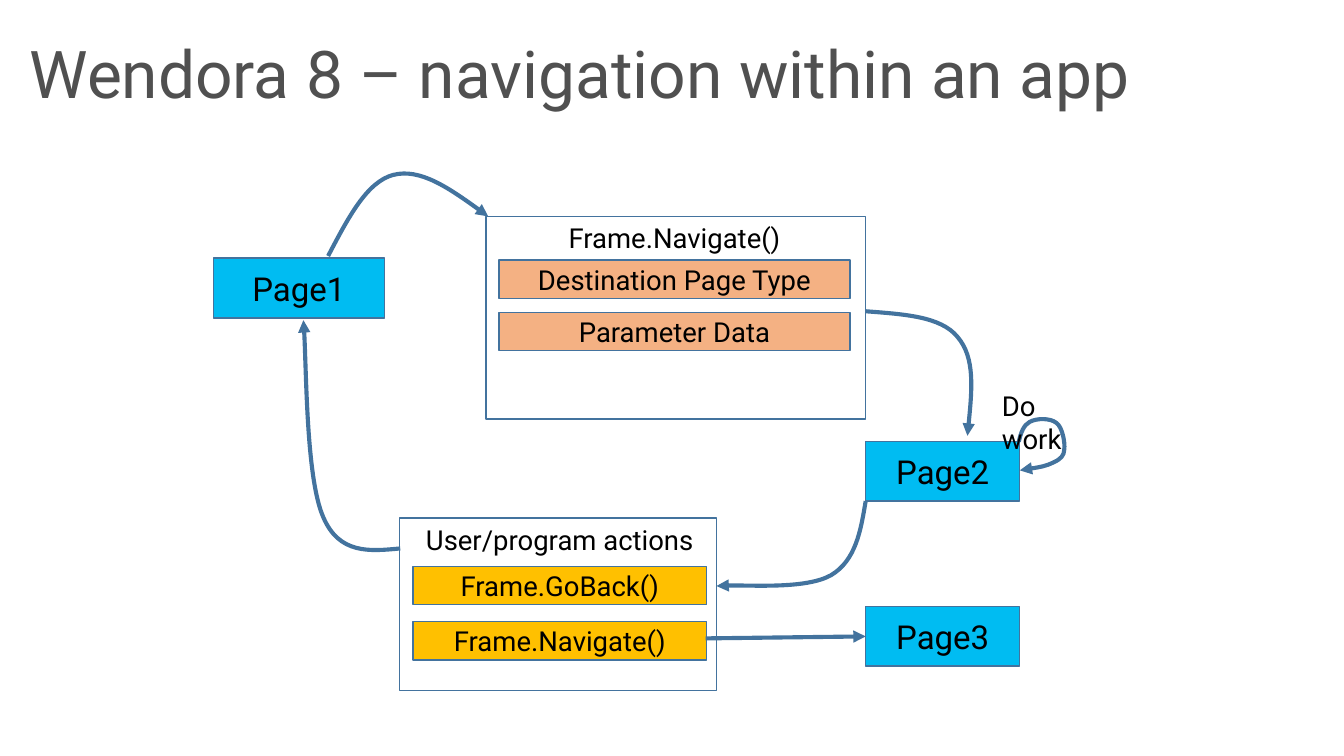
from lxml.etree import SubElement
from pptx import Presentation
from pptx.dml.color import RGBColor
from pptx.enum.shapes import MSO_CONNECTOR, MSO_SHAPE
from pptx.enum.text import MSO_ANCHOR, MSO_AUTO_SIZE, PP_ALIGN
from pptx.oxml.ns import qn
from pptx.util import Inches, Pt

FONT = "Roboto"
BLACK = "000000"
GREY = "505050"
LINE_BLUE = "43739E"
PAGE_BLUE = "00BCF2"
ORANGE = "F4B183"
AMBER = "FFC000"

# Each curve is a start point followed by three points per Bezier segment.
CURVES = {
    "page1 to navigate": [
        (3.32, 2.59),
        (3.52, 2.21), (3.71, 1.84), (3.98, 1.77),
        (4.25, 1.7), (4.6, 1.94), (4.94, 2.19),
    ],
    "navigate to page2": [
        (8.76, 3.15),
        (9.14, 3.18), (9.52, 3.2), (9.69, 3.41),
        (9.87, 3.62), (9.83, 4.02), (9.79, 4.41),
    ],
    "page2 to actions": [
        (8.76, 5.07),
        (8.71, 5.37), (8.66, 5.67), (8.41, 5.82),
        (8.16, 5.96), (7.44, 5.91), (7.25, 5.93),
    ],
    "actions to page1": [
        (4.05, 5.55),
        (3.74, 5.58), (3.43, 5.61), (3.27, 5.23),
        (3.1, 4.84), (3.1, 3.56), (3.07, 3.24),
    ],
    "page2 to itself": [
        (10.31, 4.47),
        (10.33, 4.38), (10.36, 4.3), (10.42, 4.27),
        (10.49, 4.23), (10.63, 4.23), (10.69, 4.28),
        (10.75, 4.32), (10.78, 4.48), (10.77, 4.55),
        (10.77, 4.61), (10.73, 4.65), (10.66, 4.68),
        (10.58, 4.72), (10.45, 4.74), (10.32, 4.76),
    ],
}


def rgb(color):
    return RGBColor.from_string(color)


def write(text_frame, text, size, color=BLACK, align=PP_ALIGN.CENTER):
    text_frame.word_wrap = True
    paragraph = text_frame.paragraphs[0]
    paragraph.text = text
    paragraph.alignment = align
    font = paragraph.runs[0].font
    font.name = FONT
    font.size = Pt(size)
    font.color.rgb = rgb(color)


def style_line(line, width):
    line.color.rgb = rgb(LINE_BLUE)
    line.width = Pt(width)


def add_box(slide, left, top, width, height, fill=None, text="", size=20):
    box = slide.shapes.add_shape(
        MSO_SHAPE.RECTANGLE, Inches(left), Inches(top), Inches(width), Inches(height))
    box.shadow.inherit = False
    style_line(box.line, 1)
    if fill:
        box.fill.solid()
        box.fill.fore_color.rgb = rgb(fill)
    else:
        box.fill.background()
    if text:
        box.text_frame.vertical_anchor = MSO_ANCHOR.MIDDLE
        write(box.text_frame, text, size)


def add_label(slide, left, top, width, text, align=PP_ALIGN.CENTER):
    label = slide.shapes.add_textbox(
        Inches(left), Inches(top), Inches(width), Inches(0.44))
    write(label.text_frame, text, 20, align=align)
    label.text_frame.auto_size = MSO_AUTO_SIZE.SHAPE_TO_FIT_TEXT


def add_title(slide, text):
    title = slide.shapes.add_textbox(Inches(0.3), Inches(0.33), Inches(13), Inches(1))
    frame = title.text_frame
    frame.margin_left = frame.margin_top = frame.margin_right = frame.margin_bottom = 0
    write(frame, text, 48, GREY, PP_ALIGN.LEFT)


def style_arrow(arrow):
    style_line(arrow.line, 3)
    SubElement(arrow.line._get_or_add_ln(), qn("a:tailEnd"), type="triangle")


def add_curved_arrow(slide, points):
    """Lay out the points as a freeform, then turn each three into a Bezier segment."""
    start, *others = [(Inches(x), Inches(y)) for x, y in points]
    builder = slide.shapes.build_freeform(*start)
    builder.add_line_segments(others, close=False)
    curve = builder.convert_to_shape()
    curve.shadow.inherit = False
    curve.fill.background()
    style_arrow(curve)

    outline = next(curve._element.iter(qn("a:path")))
    steps = outline.findall(qn("a:lnTo"))
    for first in range(0, len(steps), 3):
        segment = SubElement(outline, qn("a:cubicBezTo"))
        for step in steps[first:first + 3]:
            segment.append(step[0])
            outline.remove(step)


def add_straight_arrow(slide, start, end):
    arrow = slide.shapes.add_connector(
        MSO_CONNECTOR.STRAIGHT, *[Inches(value) for value in (*start, *end)])
    style_arrow(arrow)
    SubElement(arrow._element.spPr, qn("a:effectLst"))


def main():
    presentation = Presentation()
    presentation.slide_width = Inches(13.6)
    presentation.slide_height = Inches(7.65)
    slide = presentation.slides.add_slide(presentation.slide_layouts[6])

    add_title(slide, "Wendora 8 – navigation within an app")

    add_box(slide, 2.16, 2.61, 1.73, 0.61, PAGE_BLUE, "Page1", 24)
    for top, page in ((4.47, "Page2"), (6.14, "Page3")):
        add_box(slide, 8.76, top, 1.56, 0.6, PAGE_BLUE, page, 24)

    add_box(slide, 4.92, 2.19, 3.84, 2.05)
    add_label(slide, 5.05, 2.19, 3.55, "Frame.Navigate()")
    for top, argument in ((2.63, "Destination Page Type"), (3.16, "Parameter Data")):
        add_box(slide, 5.05, top, 3.55, 0.39, ORANGE, argument)

    add_box(slide, 4.04, 5.24, 3.21, 1.75)
    add_label(slide, 4.18, 5.24, 2.97, "User/program actions")
    for top, action in ((5.73, "Frame.GoBack()"), (6.29, "Frame.Navigate()")):
        add_box(slide, 4.18, top, 2.97, 0.39, AMBER, action)

    for points in CURVES.values():
        add_curved_arrow(slide, points)
    add_straight_arrow(slide, (7.14, 6.46), (8.76, 6.44))
    add_label(slide, 10.04, 3.89, 1.15, "Do work", PP_ALIGN.LEFT)

    presentation.save("out.pptx")


if __name__ == "__main__":
    main()
